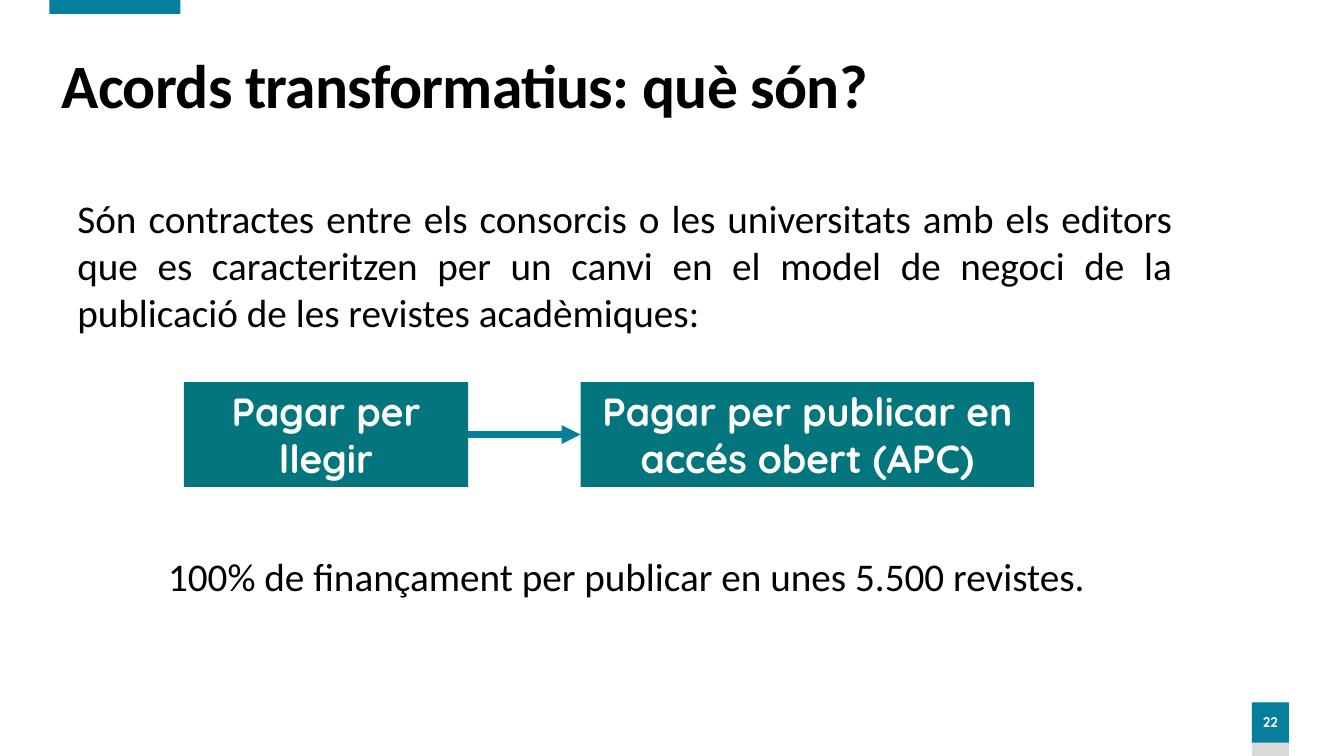
from lxml.etree import SubElement
from pptx import Presentation
from pptx.dml.color import RGBColor
from pptx.enum.shapes import MSO_CONNECTOR, MSO_SHAPE
from pptx.enum.text import MSO_ANCHOR, MSO_AUTO_SIZE, PP_ALIGN
from pptx.oxml.ns import qn
from pptx.util import Pt

COLORS = {"black": "000000", "white": "FFFFFF", "grey": "D9D9D9",
          "blue": "067F9C", "teal": "02767C"}
BODY_FONT, BOX_FONT = "Calibri", "Quicksand"

TITLE = "Acords transformatius: què són?"
INTRO = ("Són contractes entre els consorcis o les universitats amb els editors "
         "que es caracteritzen per un canvi en el model de negoci de la "
         "publicació de les revistes acadèmiques:")
FUNDING = "100% de finançament per publicar en unes 5.500 revistes."
PAGE = "22"

# text, left, width
STEPS = [("Pagar per llegir", 131.4, 203),
         ("Pagar per publicar en accés obert (APC)", 414.7, 324)]
STEP_TOP, STEP_H = 272.9, 75

# left, top, width, height, colour
DECOR = [(894.2, 501.8, 26.6, 38.2, "grey"),
         (35.3, 0, 93.6, 10, "blue")]
PAGE_BOX = (894.2, 501.8, 26.6, 28.8)


def rgb(name):
    return RGBColor.from_string(COLORS[name])


def write(shape, text, size, font, color, bold=False, align=PP_ALIGN.LEFT):
    tf = shape.text_frame
    tf.word_wrap = True
    p = tf.paragraphs[0]
    p.alignment = align
    r = p.add_run()
    r.text = text
    r.font.size, r.font.name, r.font.bold = Pt(size), font, bold
    r.font.color.rgb = rgb(color)
    return p, r


def add_rect(s, left, top, width, height, color):
    sp = s.shapes.add_shape(MSO_SHAPE.RECTANGLE, Pt(left), Pt(top), Pt(width), Pt(height))
    sp.shadow.inherit = False
    sp.fill.solid()
    sp.fill.fore_color.rgb = rgb(color)
    sp.line.fill.background()
    return sp


def add_text(s, left, top, width, height, text, align):
    sp = s.shapes.add_textbox(Pt(left), Pt(top), Pt(width), Pt(height))
    write(sp, text, 28, BODY_FONT, "black", align=align)


def add_title(s):
    sp = s.shapes.title
    sp.left, sp.top, sp.width, sp.height = Pt(35.3), Pt(34.6), Pt(880), Pt(56.9)
    p, r = write(sp, TITLE, 44, BODY_FONT, "black", bold=True)
    p.line_spacing = 0.9
    r.font._element.set("spc", "-50")
    tf = sp.text_frame
    tf.auto_size = MSO_AUTO_SIZE.NONE
    tf.vertical_anchor = MSO_ANCHOR.MIDDLE
    tf.margin_left = tf.margin_right = Pt(8.64)
    tf.margin_top = tf.margin_bottom = Pt(4.32)


def add_page_number(s):
    sp = add_rect(s, *PAGE_BOX, "blue")
    p, _ = write(sp, PAGE, 10, BOX_FONT, "white", bold=True, align=PP_ALIGN.CENTER)
    p.line_spacing, p.space_before = 0.9, Pt(10)
    tf = sp.text_frame
    tf.vertical_anchor = MSO_ANCHOR.MIDDLE
    tf.margin_left = tf.margin_right = 0
    tf.margin_top = tf.margin_bottom = Pt(2.88)


def add_arrow(s, x1, x2, y):
    line = s.shapes.add_connector(MSO_CONNECTOR.STRAIGHT, Pt(x1), Pt(y), Pt(x2), Pt(y))
    line.line.color.rgb = rgb("blue")
    line.line.width = Pt(4.5)
    SubElement(line.line._get_or_add_ln(), qn("a:tailEnd"), type="triangle")
    SubElement(line._element.spPr, qn("a:effectLst"))


def main():
    prs = Presentation()
    prs.slide_width, prs.slide_height = Pt(960), Pt(540)
    s = prs.slides.add_slide(prs.slide_layouts[5])

    for decor in DECOR:
        add_rect(s, *decor)
    add_page_number(s)
    add_title(s)
    add_text(s, 48.2, 135.4, 796.3, 111.6, INTRO, PP_ALIGN.JUSTIFY)

    for text, left, width in STEPS:
        sp = add_rect(s, left, STEP_TOP, width, STEP_H, "teal")
        write(sp, text, 28, BOX_FONT, "white", bold=True, align=PP_ALIGN.CENTER)
        sp.text_frame.vertical_anchor = MSO_ANCHOR.TOP
    (_, left, width), (_, next_left, _) = STEPS
    add_arrow(s, left + width, next_left, STEP_TOP + STEP_H / 2)

    add_text(s, 113, 391, 715.7, 41, FUNDING, PP_ALIGN.LEFT)
    prs.save("out.pptx")


if __name__ == "__main__":
    main()
